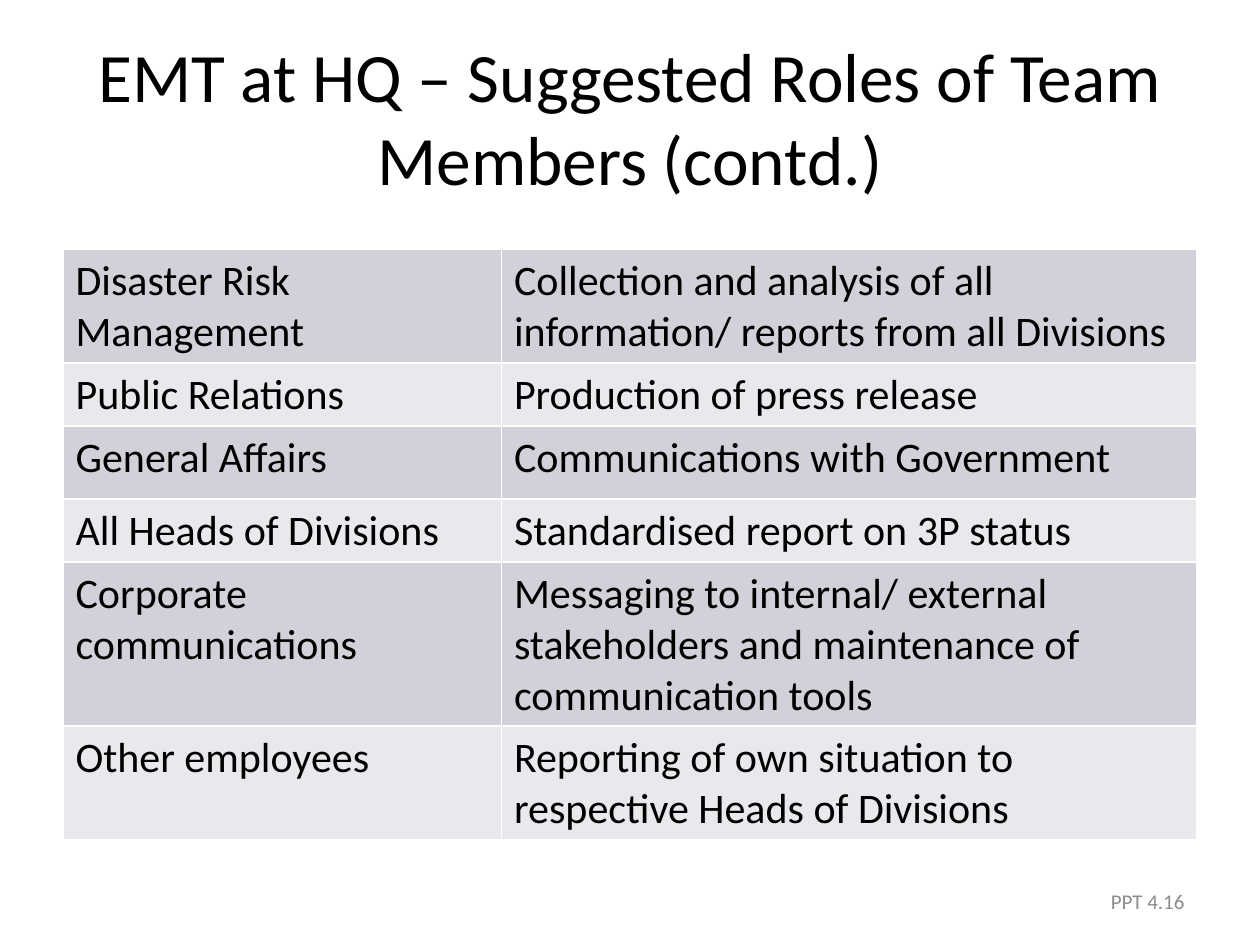
import pptx
import pptx.dml.color
import pptx.enum.text
import pptx.oxml
import pptx.oxml.ns
import pptx.util
from pptx.util import Inches

TITLE = "EMT at HQ – Suggested Roles of Team Members (contd.)"
FOOTER = "PPT 4.16"
ROLES = [
    ("Disaster Risk Management",
     "Collection and analysis of all information/ reports from all Divisions"),
    ("Public Relations", "Production of press release"),
    ("General Affairs", "Communications with Government"),
    ("All Heads of Divisions", "Standardised report on 3P status"),
    ("Corporate communications",
     "Messaging to internal/ external stakeholders and maintenance of communication tools"),
    ("Other employees", "Reporting of own situation to respective Heads of Divisions"),
]
COLUMN_WIDTHS = (3.48, 5.52)
ROW_HEIGHT = 0.41
TALL_ROWS = {"General Affairs": 0.58}
TABLE_HEIGHT = 4.68

FONT = "Calibri"
COLORS = {
    "text": "000000",
    "footer": "8C8C8C",
    "odd_row": "D1D1DA",
    "even_row": "E9E9ED",
    "border": "FFFFFF",
}
ALIGN = pptx.enum.text.PP_ALIGN


def rgb(name):
    return pptx.dml.color.RGBColor.from_string(COLORS[name])


def write(text_frame, text, size, color, alignment):
    text_frame.text = text
    paragraph = text_frame.paragraphs[0]
    paragraph.alignment = alignment
    font = paragraph.runs[0].font
    font.name = FONT
    font.size = pptx.util.Pt(size)
    font.color.rgb = rgb(color)


def add_text(slide, box, text, size, color, alignment):
    shape = slide.shapes.add_textbox(*map(Inches, box))
    shape.text_frame.word_wrap = True
    shape.text_frame.vertical_anchor = pptx.enum.text.MSO_ANCHOR.MIDDLE
    write(shape.text_frame, text, size, color, alignment)


def add_borders(cell):
    """Put a 1 pt line on all four sides, ahead of the fill as the schema requires."""
    properties = cell._tc.get_or_add_tcPr()
    for index, side in enumerate(("lnL", "lnR", "lnT", "lnB")):
        properties.insert(index, pptx.oxml.parse_xml(
            f'<a:{side} {pptx.oxml.ns.nsdecls("a")} w="12700"><a:solidFill>'
            f'<a:srgbClr val="{COLORS["border"]}"/></a:solidFill></a:{side}>'))


def add_roles_table(slide):
    frame = slide.shapes.add_table(
        len(ROLES), len(COLUMN_WIDTHS), Inches(0.5), Inches(1.98),
        Inches(sum(COLUMN_WIDTHS)), Inches(TABLE_HEIGHT))
    table = frame.table
    table.first_row = False
    for column, width in zip(table.columns, COLUMN_WIDTHS):
        column.width = Inches(width)
    for row_index, (row, texts) in enumerate(zip(table.rows, ROLES)):
        row.height = Inches(TALL_ROWS.get(texts[0], ROW_HEIGHT))
        for cell, text in zip(row.cells, texts):
            write(cell.text_frame, text, 24, "text", ALIGN.LEFT)
            cell.fill.solid()
            cell.fill.fore_color.rgb = rgb("even_row" if row_index % 2 else "odd_row")
            add_borders(cell)
    frame.height = Inches(TABLE_HEIGHT)


def main():
    presentation = pptx.Presentation()
    presentation.slide_width = Inches(10)
    presentation.slide_height = Inches(7.5)
    slide = presentation.slides.add_slide(presentation.slide_layouts[6])
    add_text(slide, (0.5, 0.3, 9, 1.25), TITLE, 39.6, "text", ALIGN.CENTER)
    add_roles_table(slide)
    add_text(slide, (7.17, 6.95, 2.33, 0.4), FOOTER, 12, "footer", ALIGN.RIGHT)
    presentation.save("out.pptx")


if __name__ == "__main__":
    main()
